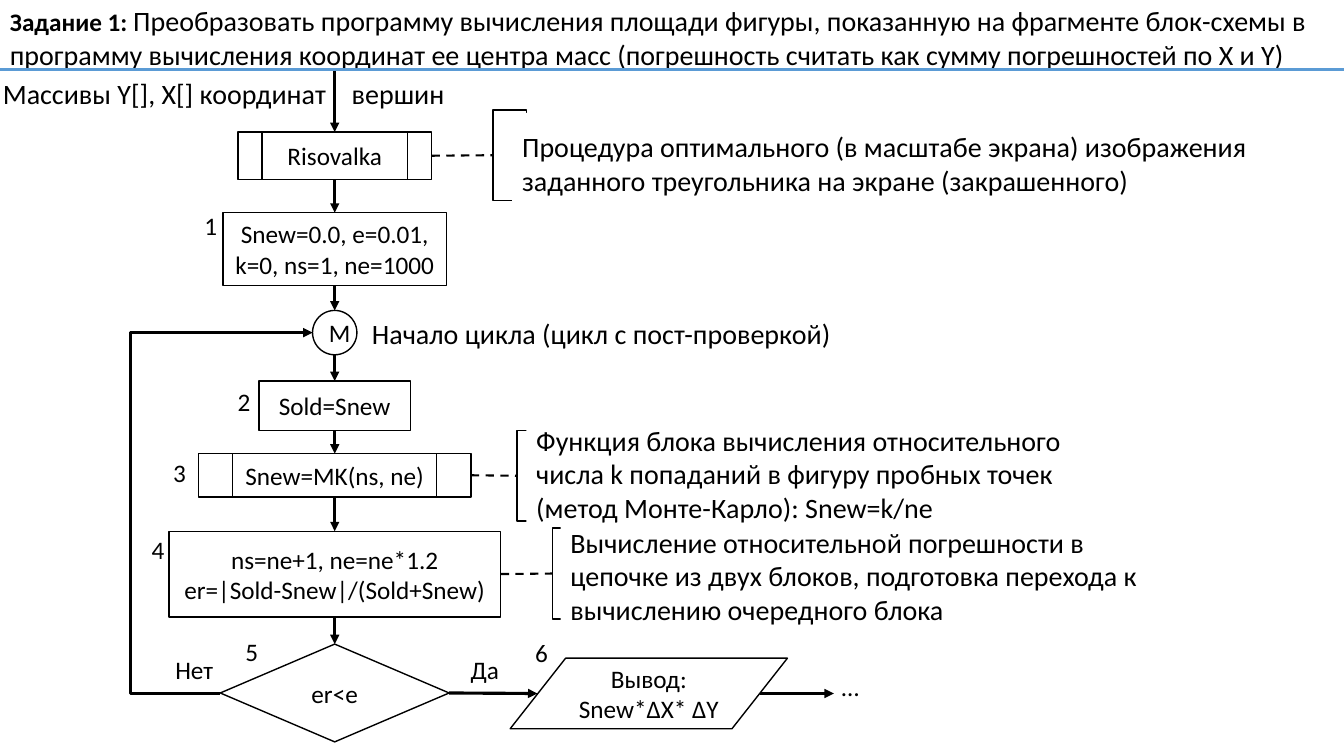
from lxml import etree
from pptx import Presentation
from pptx.dml.color import RGBColor
from pptx.enum.dml import MSO_LINE
from pptx.enum.shapes import MSO_CONNECTOR, MSO_SHAPE
from pptx.enum.text import MSO_ANCHOR, MSO_AUTO_SIZE, PP_ALIGN
from pptx.oxml.ns import qn
from pptx.util import Inches, Pt

RECT, ELLIPSE = MSO_SHAPE.RECTANGLE, MSO_SHAPE.OVAL
PROCESS, SUBROUTINE = MSO_SHAPE.FLOWCHART_PROCESS, MSO_SHAPE.FLOWCHART_PREDEFINED_PROCESS
DECISION, OUTPUT = MSO_SHAPE.FLOWCHART_DECISION, MSO_SHAPE.FLOWCHART_DATA
STRAIGHT, ELBOW = MSO_CONNECTOR.STRAIGHT, MSO_CONNECTOR.ELBOW
DASH = MSO_LINE.DASH
MIDDLE, TOP_ANCHOR = MSO_ANCHOR.MIDDLE, MSO_ANCHOR.TOP
CENTER, LEFT_ALIGN = PP_ALIGN.CENTER, PP_ALIGN.LEFT
FIT_SHAPE = MSO_AUTO_SIZE.SHAPE_TO_FIT_TEXT
TOP, LEFT, BOTTOM, RIGHT = range(4)
BLACK, WHITE, BLUE = "000000", "FFFFFF", "5B9BD5"
FONT = "Calibri"


def rgb(value):
    return RGBColor.from_string(value)


def set_text(sp, text, size, align, anchor):
    tf = sp.text_frame
    tf.word_wrap = True
    tf.vertical_anchor = anchor
    tf.text = text
    for p in tf.paragraphs:
        p.alignment = align
        for r in p.runs:
            r.font.name, r.font.size = FONT, Pt(size)
            r.font.color.rgb = rgb(BLACK)
    return tf


def add_block(slide, kind, x, y, w, h, text="", fill=None, line=BLACK, size=18, align=CENTER):
    sp = slide.shapes.add_shape(kind, Inches(x), Inches(y), Inches(w), Inches(h))
    sp.shadow.inherit = False
    if fill:
        sp.fill.solid()
        sp.fill.fore_color.rgb = rgb(fill)
    else:
        sp.fill.background()
    if line:
        sp.line.color.rgb = rgb(line)
        sp.line.width = Pt(1)
    else:
        sp.line.fill.background()
    set_text(sp, text, size, align, MIDDLE)
    return sp


def add_label(slide, x, y, w, h, text, size=18, wrap=False):
    sp = slide.shapes.add_textbox(Inches(x), Inches(y), Inches(w), Inches(h))
    tf = set_text(sp, text, size, LEFT_ALIGN, TOP_ANCHOR)
    tf.word_wrap = wrap
    tf.auto_size = FIT_SHAPE
    return tf


def add_line(slide, start, end, color=BLACK, width=2.25, arrow=True, kind=STRAIGHT):
    """Each end is an (x, y) point in inches or a (shape, side) pair."""
    points = [(0, 0) if hasattr(a, "shape_id") else (Inches(a), Inches(b))
              for a, b in (start, end)]
    line = slide.shapes.add_connector(kind, *points[0], *points[1])
    for (a, b), connect in ((start, line.begin_connect), (end, line.end_connect)):
        if hasattr(a, "shape_id"):
            connect(a, b)
    line.line.color.rgb = rgb(color)
    line.line.width = Pt(width)
    if arrow:
        etree.SubElement(line.line._get_or_add_ln(), qn("a:tailEnd"), type="triangle")
    etree.SubElement(line._element.spPr, qn("a:effectLst"))
    return line


def add_note(slide, block, x, y, dx, dy, w, text):
    """Bracket at x, y; the white text panel hides the rest of its frame."""
    bracket = add_block(slide, PROCESS, x, y, 0.33, 0.9)
    link = add_line(slide, (block, RIGHT), (bracket, LEFT), width=1.5, arrow=False)
    link.line.dash_style = DASH
    panel = add_block(slide, RECT, x + dx, y + dy, w, 1, text, WHITE, None, 20, LEFT_ALIGN)
    panel.text_frame.margin_right = Inches(0.2)


def add_loop(slide, start, end, turn_x):
    loop = add_line(slide, start, end, kind=ELBOW)
    guides = loop._element.spPr.find(qn("a:prstGeom")).get_or_add_avLst()
    bend = round((turn_x - start[0]) / (end[0] - start[0]) * 100000)
    etree.SubElement(guides, qn("a:gd"), name="adj1", fmla=f"val {bend}")


def flowchart(slide, axis, top):
    # Blocks centred on the axis: kind, offset from top, width, height, text
    rows = [
        (SUBROUTINE, 0.61, 1.92, 0.47, "Risovalka"),
        (RECT, 1.41, 2.22, 0.72, "Snew=0.0, e=0.01, k=0, ns=1, ne=1000"),
        (ELLIPSE, 2.38, 0.44, 0.44, "M"),
        (RECT, 3.08, 1.5, 0.49, "Sold=Snew"),
        (SUBROUTINE, 3.8, 2.7, 0.43, "Snew=MK(ns, ne)"),
        (RECT, 4.57, 3.29, 0.85, "ns=ne+1, ne=ne*1.2\ner=|Sold-Snew|/(Sold+Snew)"),
        (DECISION, 5.69, 2.27, 0.97, "er<e"),
    ]
    blocks = [add_block(slide, kind, axis - w / 2, top + y, w, h, text)
              for kind, y, w, h, text in rows]
    draw, init, merge, save, monte, error, check = blocks
    exit_y = top + 6.18
    output = add_block(slide, OUTPUT, axis + 1.74, exit_y - 0.35, 2.75, 0.7,
                       "Вывод:\nSnew*ΔX* ΔY")

    # Arrows down the axis; the circle has no side site at its bottom
    add_line(slide, (axis, top), (draw, TOP))
    for upper, lower in zip(blocks, blocks[1:]):
        start = (axis, top + 2.82) if upper is merge else (upper, BOTTOM)
        add_line(slide, start, (lower, TOP))

    # Exit and return of the loop
    add_line(slide, (check, RIGHT), (axis + 2.01, exit_y))
    add_line(slide, (axis + 4.22, exit_y), (axis + 4.95, exit_y))
    add_loop(slide, (axis - 1.14, exit_y), (axis - 0.22, top + 2.6), axis - 2.03)

    # Captions
    tf = add_label(slide, axis - 3.39, top + 0.01, 4.71, 0.44,
                   "Массивы Y[], X[] координат\tвершин", 20, True)
    tabs = etree.SubElement(tf.paragraphs[0]._p.get_or_add_pPr(), qn("a:tabLst"))
    etree.SubElement(tabs, qn("a:tab"), pos=str(Inches(3.46)), algn="l")
    add_label(slide, axis + 0.27, top + 2.39, 4.79, 0.44,
              "Начало цикла (цикл с пост-проверкой)", 20)
    for dx, dy, w, text in ((-1.68, -0.44, 0.58, "Нет"), (1.25, -0.44, 0.49, "Да"),
                            (4.93, -0.27, 0.38, "…")):
        add_label(slide, axis + dx, exit_y + dy, w, 0.4, text)

    # Notes
    add_note(slide, monte, axis + 1.81, top + 3.57, 0.09, -0.07, 6.12,
             "Функция блока вычисления относительного числа k попаданий в фигуру "
             "пробных точек (метод Монте-Карло): Snew=k/ne")
    add_note(slide, draw, axis + 1.57, top + 0.39, 0.19, 0.03, 8.01,
             "Процедура оптимального (в масштабе экрана) изображения заданного "
             "треугольника на экране (закрашенного)")
    add_note(slide, error, axis + 2.16, top + 4.54, 0.08, -0.03, 6.06,
             "Вычисление относительной погрешности в цепочке из двух блоков, "
             "подготовка перехода к вычислению очередного блока")

    # Block numbers, offset from each block's corner
    numbered = [(init, -0.28, -0.07), (save, -0.31, 0), (monte, -0.35, -0.01),
                (error, -0.27, -0.02), (check, 0.15, -0.13), (output, 0.15, -0.26)]
    for number, (block, dx, dy) in enumerate(numbered, 1):
        add_label(slide, block.left.inches + dx, block.top.inches + dy, 0.33, 0.4, str(number))


def header(slide, x, y, w):
    tf = add_label(slide, x, y, w, 0.77, "Задание 1: ", wrap=True)
    p = tf.paragraphs[0]
    p.runs[0].font.bold = True
    r = p.add_run()
    r.text = ("Преобразовать программу вычисления площади фигуры, показанную на фрагменте "
              "блок-схемы в программу вычисления координат ее центра масс "
              "(погрешность считать как сумму погрешностей по X и Y)")
    r.font.name, r.font.size = FONT, Pt(20)
    r.font.color.rgb = rgb(BLACK)
    add_line(slide, (x, y + 0.7), (x + w, y + 0.7), BLUE, arrow=False)


def main():
    prs = Presentation()
    prs.slide_width, prs.slide_height = Inches(13.33), Inches(7.5)
    s = prs.slides.add_slide(prs.slide_layouts[6])
    flowchart(s, 3.32, 0.7)
    header(s, 0, -0.01, 13.33)
    prs.save("out.pptx")


if __name__ == "__main__":
    main()
